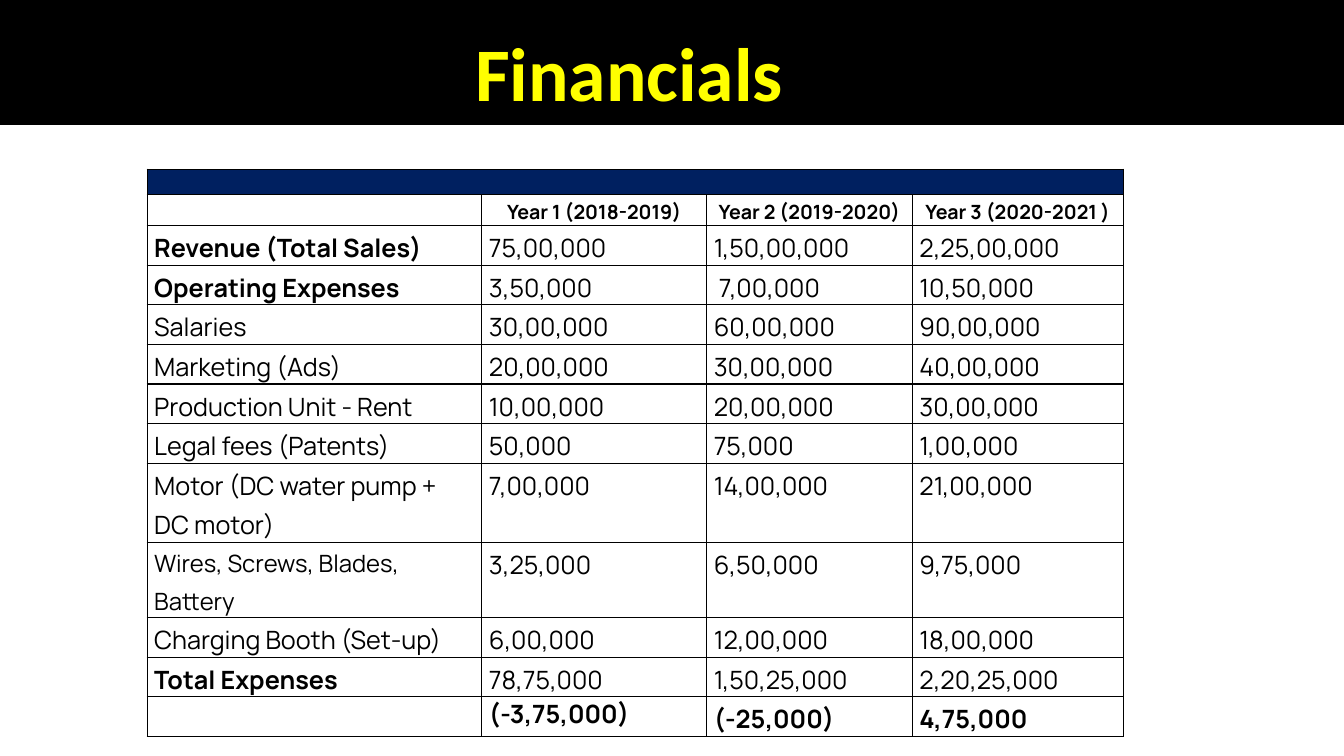
from typing import NamedTuple

import lxml.etree
import pptx
import pptx.dml.color
import pptx.enum.shapes
import pptx.enum.text
import pptx.oxml.ns
import pptx.slide
import pptx.table
import pptx.util

Inches = pptx.util.Inches
Pt = pptx.util.Pt
BLACK = pptx.dml.color.RGBColor(0x00, 0x00, 0x00)
YELLOW = pptx.dml.color.RGBColor(0xFF, 0xFF, 0x00)
NAVY = pptx.dml.color.RGBColor(0x00, 0x20, 0x60)
CENTER = pptx.enum.text.PP_ALIGN.CENTER
LEFT = pptx.enum.text.PP_ALIGN.LEFT

COLUMN_WIDTHS = (3.32, 2.23, 2.04, 2.09)
BANNER_HEIGHT = 0.25


class Entry(NamedTuple):
    """One line of the statement: a label and a figure for each year."""
    label: str
    figures: tuple[str, str, str]
    height: float = 0.39
    label_size: float = 18
    label_bold: bool = False
    figure_size: float = 18
    figure_bold: bool = False
    figure_align: pptx.enum.text.PP_ALIGN = LEFT


ENTRIES = (
    Entry("", ("Year 1 (2018-2019)", "Year 2 (2019-2020)", "Year 3 (2020-2021 )"),
          height=0.3, figure_size=14, figure_bold=True, figure_align=CENTER),
    Entry("Revenue (Total Sales)", ("75,00,000", "1,50,00,000", "2,25,00,000"), label_bold=True),
    Entry("Operating Expenses", ("3,50,000", " 7,00,000", "10,50,000"), label_bold=True),
    Entry("Salaries", ("30,00,000", "60,00,000", "90,00,000")),
    Entry("Marketing (Ads)", ("20,00,000", "30,00,000", "40,00,000")),
    Entry("Production Unit - Rent", ("10,00,000", "20,00,000", "30,00,000")),
    Entry("Legal fees (Patents)", ("50,000", "75,000", "1,00,000")),
    Entry("Motor (DC water pump + DC motor)", ("7,00,000", "14,00,000", "21,00,000"), height=0.78),
    Entry("Wires, Screws, Blades, Battery", ("3,25,000", "6,50,000", "9,75,000"),
          height=0.74, label_size=17),
    Entry("Charging Booth (Set-up)", ("6,00,000", "12,00,000", "18,00,000")),
    Entry("Total Expenses", ("78,75,000", "1,50,25,000", "2,20,25,000"), label_bold=True),
    Entry("", ("(-3,75,000)", "(-25,000)", "4,75,000"), figure_bold=True),
)


def add_child(parent: lxml.etree._Element, tag: str, **attributes: str) -> lxml.etree._Element:
    return lxml.etree.SubElement(parent, pptx.oxml.ns.qn(tag), attributes)


def frame_cell(cell: pptx.table._Cell) -> None:
    """Give the cell thin black borders, no fill and tight margins."""
    cell.margin_left = cell.margin_right = Inches(0.07)
    cell.margin_top = cell.margin_bottom = 0
    properties = cell._tc.get_or_add_tcPr()
    for side in ("a:lnL", "a:lnR", "a:lnT", "a:lnB"):
        border = add_child(properties, side, w=str(Pt(1)))
        add_child(add_child(border, "a:solidFill"), "a:srgbClr", val=str(BLACK))
    cell.fill.background()


def write_cell(cell: pptx.table._Cell, text: str, size: float, bold: bool,
               align: pptx.enum.text.PP_ALIGN, spacing: float) -> None:
    paragraph = cell.text_frame.paragraphs[0]
    if not text:
        add_child(paragraph._p, "a:endParaRPr", sz="1000")
        return
    paragraph.alignment = align
    paragraph.line_spacing = spacing
    run = paragraph.add_run()
    run.text = text
    run.font.name = "Manrope"
    run.font.size = Pt(size)
    run.font.bold = bold
    run.font.color.rgb = BLACK


def add_heading(slide: pptx.slide.Slide) -> None:
    band = slide.shapes.add_shape(pptx.enum.shapes.MSO_SHAPE.RECTANGLE,
                                  0, 0, Inches(13.33), Inches(1.24))
    band.shadow.inherit = False
    band.fill.solid()
    band.fill.fore_color.rgb = BLACK
    band.line.fill.background()
    slide.shapes._spTree.insert(2, band._element)  # behind the title

    title = slide.shapes.title
    title.left, title.top = Inches(0.93), Inches(0.12)
    title.width, title.height = Inches(10.74), Inches(1.18)
    frame = title.text_frame
    frame.auto_size = pptx.enum.text.MSO_AUTO_SIZE.NONE
    frame.vertical_anchor = pptx.enum.text.MSO_ANCHOR.MIDDLE
    frame.margin_left = Inches(0.1)
    frame.margin_right = frame.margin_top = frame.margin_bottom = Inches(0.05)
    frame.paragraphs[0].alignment = CENTER
    run = frame.paragraphs[0].add_run()
    run.text = "Financials "
    run.font.name = "Calibri"
    run.font.size = Pt(54)
    run.font.bold = True
    run.font.color.rgb = YELLOW


def add_statement(slide: pptx.slide.Slide) -> None:
    heights = (BANNER_HEIGHT, *(entry.height for entry in ENTRIES))
    statement = slide.shapes.add_table(
        len(heights), len(COLUMN_WIDTHS), Inches(1.46), Inches(1.68),
        Inches(sum(COLUMN_WIDTHS)), Inches(sum(heights))).table
    statement.first_row = statement.horz_banding = False
    for column, width in zip(statement.columns, COLUMN_WIDTHS):
        column.width = Inches(width)
    for row, height in zip(statement.rows, heights):
        row.height = Inches(height)
    for cell in statement.iter_cells():
        frame_cell(cell)

    for column in range(len(COLUMN_WIDTHS)):
        write_cell(statement.cell(0, column), "", 10, False, LEFT, 1)
    banner = statement.cell(0, 0)
    banner.merge(statement.cell(0, len(COLUMN_WIDTHS) - 1))
    banner.fill.solid()
    banner.fill.fore_color.rgb = NAVY

    for row, entry in enumerate(ENTRIES, start=1):
        write_cell(statement.cell(row, 0), entry.label, entry.label_size,
                   entry.label_bold, LEFT, 1.15)
        for column, figure in enumerate(entry.figures, start=1):
            spacing = 1 if figure == "(-3,75,000)" else 1.15
            write_cell(statement.cell(row, column), figure, entry.figure_size,
                       entry.figure_bold, entry.figure_align, spacing)


def main() -> None:
    deck = pptx.Presentation()
    deck.slide_width, deck.slide_height = Inches(13.33), Inches(7.5)
    slide = deck.slides.add_slide(deck.slide_layouts.get_by_name("Title Only"))
    add_heading(slide)
    add_statement(slide)
    deck.save("out.pptx")


if __name__ == "__main__":
    main()
